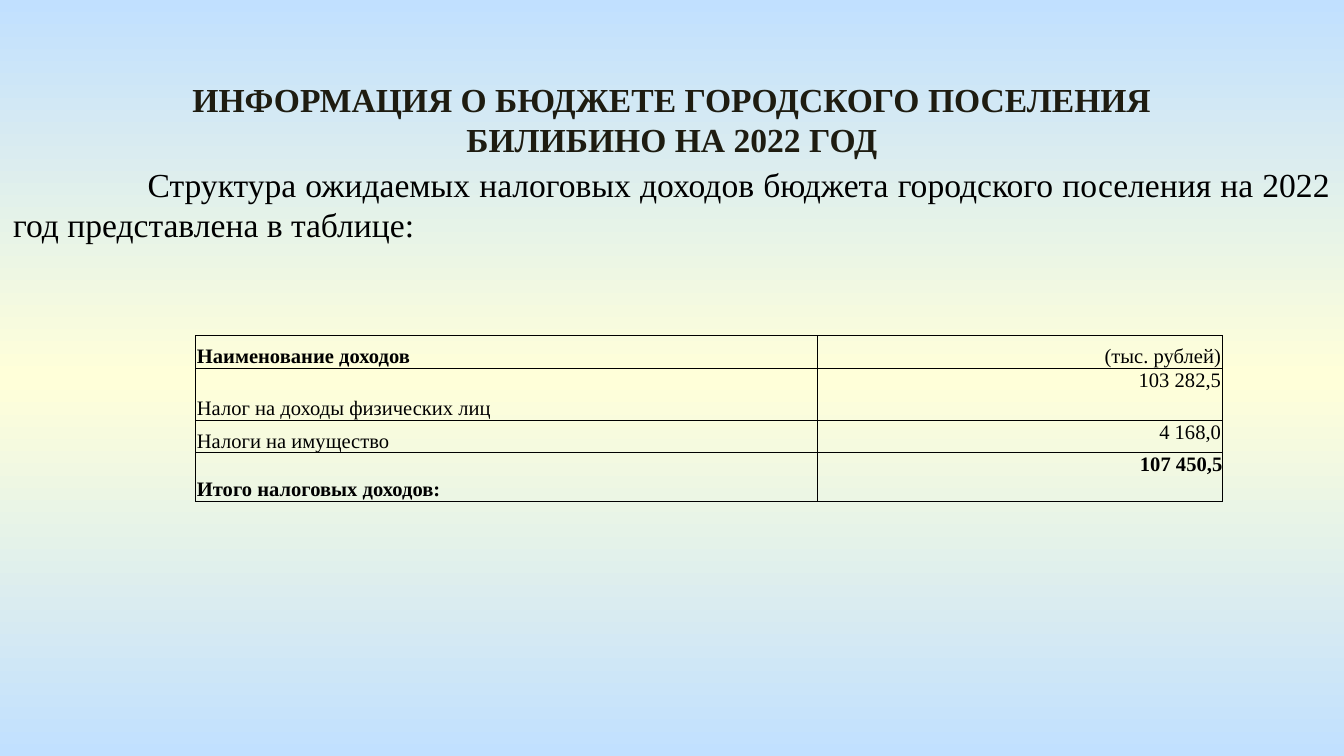
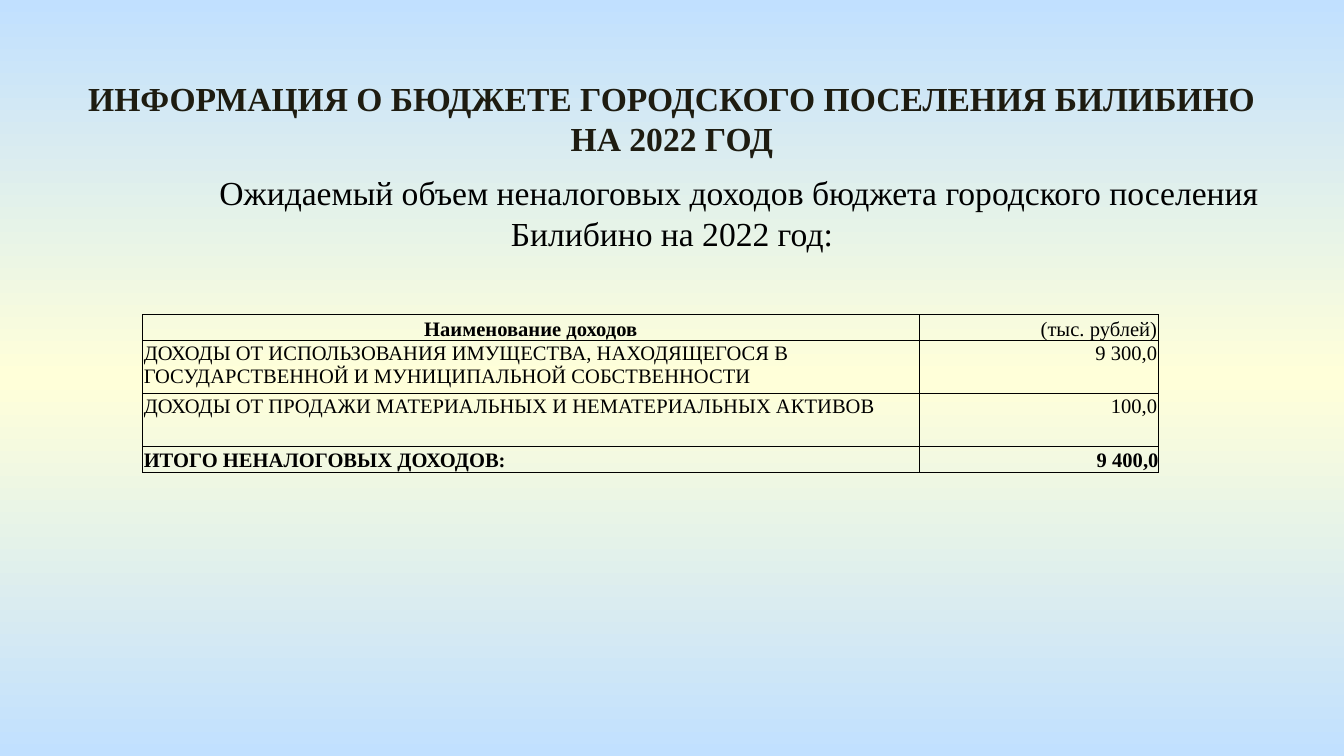
"""Build two slides on the expected revenue of a town budget for 2022."""
from copy import deepcopy
from dataclasses import dataclass

from lxml.etree import SubElement
from pptx import Presentation
from pptx.dml.color import RGBColor
from pptx.enum.text import MSO_ANCHOR, MSO_AUTO_SIZE, PP_ALIGN
from pptx.oxml.ns import qn
from pptx.util import Inches, Pt


@dataclass(frozen=True)
class Theme:
    font: str = "Times New Roman"
    sky: str = "C1E0FF"
    cream: str = "FFFFD9"
    heading: str = "1E1C11"
    ink: str = "000000"
    text_size: float = 18
    table_size: float = 11
    border: float = 0.5


theme = Theme()
TOP, BOTTOM = MSO_ANCHOR.TOP, MSO_ANCHOR.BOTTOM
LEFT, CENTER, RIGHT, JUSTIFY = PP_ALIGN.LEFT, PP_ALIGN.CENTER, PP_ALIGN.RIGHT, PP_ALIGN.JUSTIFY

HEADING = "ИНФОРМАЦИЯ О БЮДЖЕТЕ ГОРОДСКОГО ПОСЕЛЕНИЯ БИЛИБИНО НА 2022 ГОД"
HEADER = ("Наименование доходов", "(тыс. рублей)")
TEXT_HEIGHT = 12.6

budget_pages = [
    {
        "heading_at": (11.35, 9.55, 77.3),
        "intro_at": (0, 20.8, 100),
        "intro": "Структура ожидаемых налоговых доходов бюджета городского поселения "
                 "на 2022 год представлена в таблице:",
        "intro_align": JUSTIFY,
        "table_at": (14.55, 44.4),
        "columns": (46.3, 30.1),
        "header_align": JUSTIFY,
        "label_align": JUSTIFY,
        "incomes": [
            (*HEADER, 4.3, BOTTOM, BOTTOM),
            ("Налог на доходы физических лиц", "103 282,5", 6.9, BOTTOM, TOP),
            ("Налоги на имущество", "4 168,0", 4.3, BOTTOM, TOP),
            ("Итого налоговых доходов:", "107 450,5", 6.4, BOTTOM, TOP),
        ],
    },
    {
        "heading_at": (3.95, 9.4, 92.1),
        "intro_at": (2.55, 21.9, 94.9),
        "intro": "Ожидаемый объем неналоговых доходов бюджета городского поселения "
                 "Билибино на 2022 год:",
        "intro_align": CENTER,
        "table_at": (10.6, 41.6),
        "columns": (57.8, 17.8),
        "header_align": CENTER,
        "label_align": LEFT,
        "incomes": [
            (*HEADER, 3.4, BOTTOM, BOTTOM),
            ("ДОХОДЫ ОТ ИСПОЛЬЗОВАНИЯ ИМУЩЕСТВА, НАХОДЯЩЕГОСЯ В ГОСУДАРСТВЕННОЙ "
             "И МУНИЦИПАЛЬНОЙ СОБСТВЕННОСТИ", "9 300,0", 7, TOP, TOP),
            ("ДОХОДЫ ОТ ПРОДАЖИ МАТЕРИАЛЬНЫХ И НЕМАТЕРИАЛЬНЫХ АКТИВОВ",
             "100,0", 7, TOP, TOP),
            ("ИТОГО НЕНАЛОГОВЫХ ДОХОДОВ:", "9 400,0", 3.3, BOTTOM, BOTTOM),
        ],
    },
]


def write(frame, text, align, size, color=theme.ink, bold=False):
    """Put one formatted run into the first paragraph of a text frame."""
    frame.word_wrap = True
    paragraph = frame.paragraphs[0]
    paragraph.alignment = align
    run = paragraph.add_run()
    run.text = text
    run.font.name = theme.font
    run.font.size = Pt(size)
    run.font.bold = bold
    run.font.color.rgb = RGBColor.from_string(color)
    return paragraph


def outline(cell):
    """Draw a thin line on all four sides of a table cell."""
    properties = cell._tc.get_or_add_tcPr()
    for side in ("a:lnL", "a:lnR", "a:lnT", "a:lnB"):
        line = SubElement(properties, qn(side), w=str(Pt(theme.border)))
        fill = SubElement(line, qn("a:solidFill"))
        SubElement(fill, qn("a:srgbClr"), val=theme.ink)


presentation = Presentation()
presentation.slide_width = Inches(10)
presentation.slide_height = presentation.slide_width * 9 // 16
col = presentation.slide_width / 100
row = presentation.slide_height / 100

master = presentation.slide_master
backdrop = master.background.fill
backdrop.gradient()
backdrop.gradient_angle = 90
stop_list = next(master.element.cSld.iter(qn("a:gsLst")))
stop_list.insert(1, deepcopy(stop_list[0]))
for stop, color, position in zip(backdrop.gradient_stops, (theme.sky, theme.cream, theme.sky), (0, 0.5, 1)):
    stop.color.rgb = RGBColor.from_string(color)
    stop.position = position

for page in budget_pages:
    slide = presentation.slides.add_slide(presentation.slide_layouts[5])

    heading = slide.shapes.title
    left, top, width = page["heading_at"]
    heading.left, heading.top = int(left * col), int(top * row)
    heading.width, heading.height = int(width * col), int(TEXT_HEIGHT * row)
    heading.text_frame.vertical_anchor = TOP
    heading.text_frame.auto_size = MSO_AUTO_SIZE.SHAPE_TO_FIT_TEXT
    write(heading.text_frame, HEADING, CENTER, theme.text_size, theme.heading, True)

    left, top, width = page["intro_at"]
    intro = slide.shapes.add_textbox(int(left * col), int(top * row), int(width * col), int(TEXT_HEIGHT * row))
    intro.text_frame.auto_size = MSO_AUTO_SIZE.SHAPE_TO_FIT_TEXT
    paragraph = write(intro.text_frame, page["intro"], page["intro_align"], theme.text_size)
    paragraph._p.get_or_add_pPr().set("indent", str(Inches(1)))

    incomes = page["incomes"]
    left, top = page["table_at"]
    width, height = sum(page["columns"]), sum(income[2] for income in incomes)
    revenue = slide.shapes.add_table(len(incomes), 2, int(left * col), int(top * row),
                                     int(width * col), int(height * row)).table
    revenue.first_row = revenue.horz_banding = False
    for column, share in zip(revenue.columns, page["columns"]):
        column.width = int(share * col)

    for index, (label, amount, share, label_anchor, amount_anchor) in enumerate(incomes):
        revenue.rows[index].height = int(share * row)
        is_header, is_total = index == 0, index == len(incomes) - 1
        label_align = page["header_align"] if is_header else page["label_align"]
        entries = [
            (label, label_align, label_anchor, is_header or is_total, 0.01),
            (amount, RIGHT, amount_anchor, is_total, 0 if is_total else 0.01),
        ]
        for place, (text, align, anchor, bold, inset) in enumerate(entries):
            cell = revenue.cell(index, place)
            cell.margin_left = cell.margin_right = cell.margin_top = Inches(inset)
            cell.margin_bottom = 0
            cell.vertical_anchor = anchor
            outline(cell)
            cell.fill.background()
            write(cell.text_frame, text, align, theme.table_size, bold=bold)

presentation.save("out.pptx")
